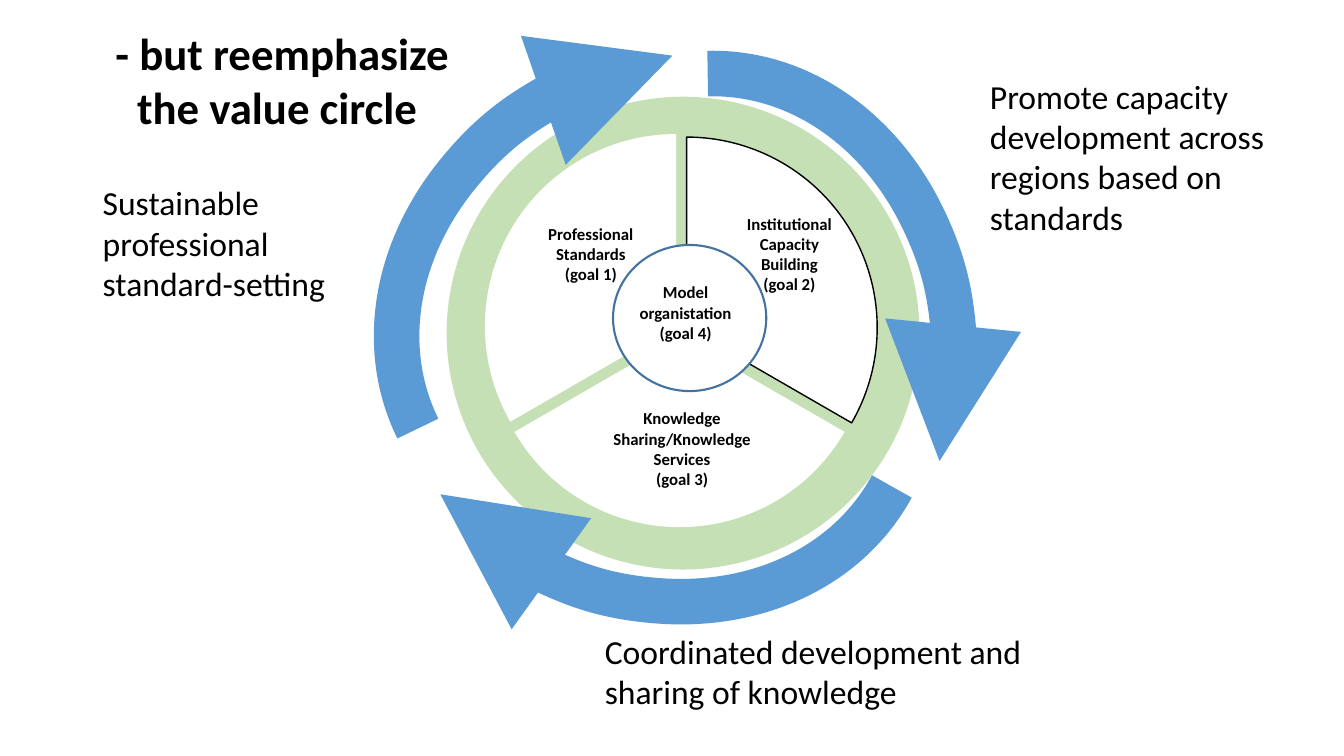
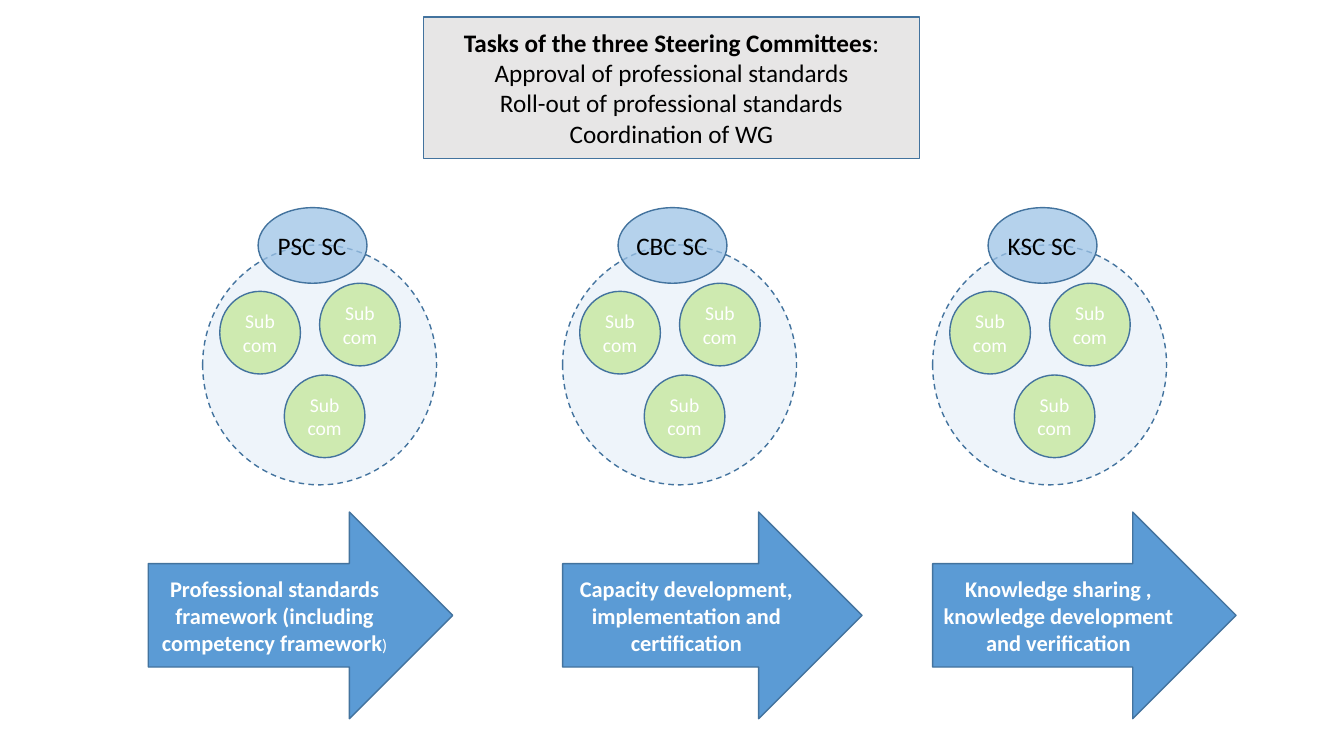
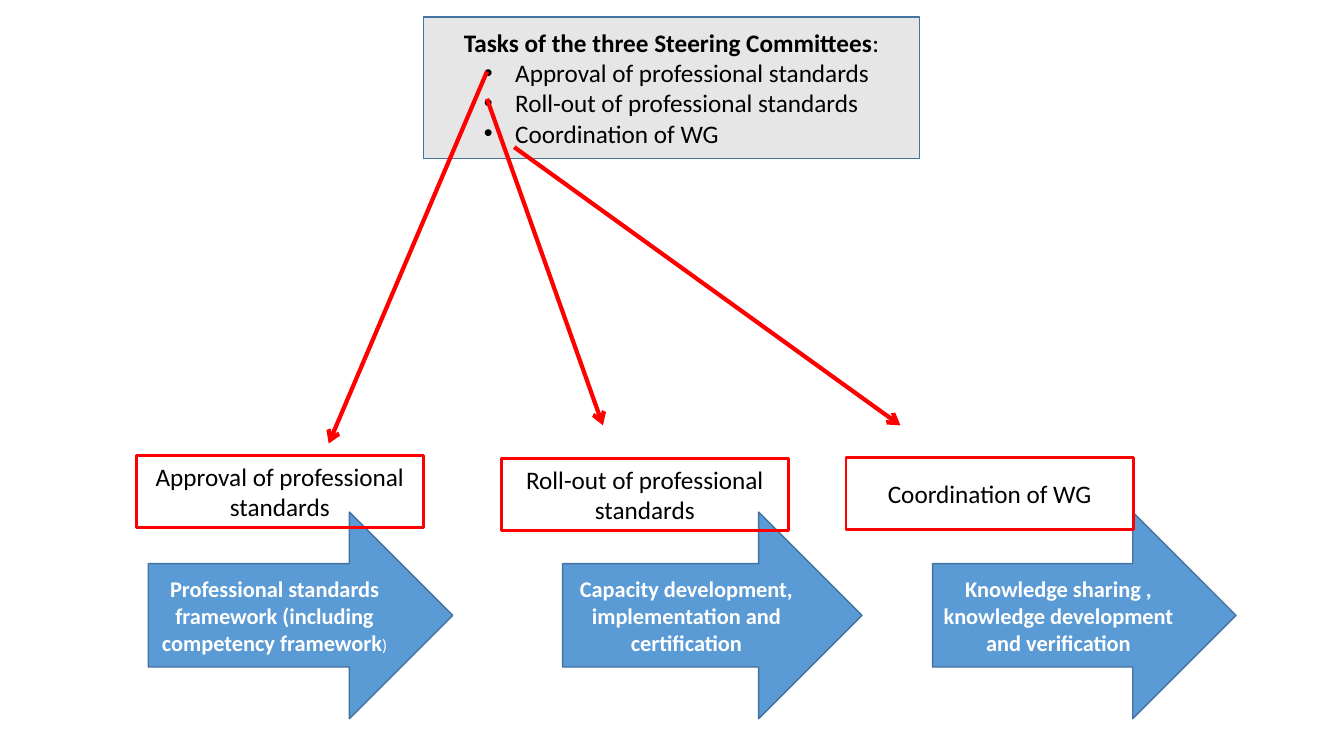
from pptx import Presentation
from pptx.dml.color import RGBColor
from pptx.enum.dml import MSO_LINE
from pptx.enum.shapes import MSO_CONNECTOR, MSO_SHAPE
from pptx.enum.text import MSO_ANCHOR, MSO_AUTO_SIZE, PP_ALIGN
from pptx.oxml.ns import qn
from pptx.util import Pt
from lxml.etree import SubElement

EMU_PER_PX = 9144  # 100 px to the inch
FONT = "Calibri"
BLACK = RGBColor(0x00, 0x00, 0x00)
WHITE = RGBColor(0xFF, 0xFF, 0xFF)
BLUE = RGBColor(0x5B, 0x9B, 0xD5)
DARK_BLUE = RGBColor(0x43, 0x73, 0x9E)
PALE_BLUE = RGBColor(0xBD, 0xD7, 0xEE)
SOFT_BLUE = RGBColor(0x9D, 0xC3, 0xE6)
RING_GREEN = RGBColor(0xC5, 0xE0, 0xB4)
SUB_GREEN = RGBColor(0xCE, 0xEA, 0xB0)
GREY = RGBColor(0xE7, 0xE6, 0xE6)
RED = RGBColor(0xFF, 0x00, 0x00)

TASKS = ("Approval of professional standards",
         "Roll-out of professional standards",
         "Coordination of WG")


def px(*lengths):
    return [length * EMU_PER_PX for length in lengths]


def write(frame, text, size=18, bold=False, color=BLACK, align=PP_ALIGN.CENTER,
          bullet=False, same_line=False):
    """Add text: \\n starts a paragraph, \\v a line; same_line extends the last paragraph."""
    frame.word_wrap = True
    for index, line in enumerate(text.split("\n")):
        para = frame.paragraphs[-1]
        if para.runs and (index or not same_line):
            para = frame.add_paragraph()
        para.alignment = align
        if bullet:
            add_bullet(para)
        for piece_index, piece in enumerate(line.split("\v")):
            if piece_index:
                para.add_line_break()
            span = para.add_run()
            span.text = piece
            span.font.name = FONT
            span.font.size = Pt(size)
            span.font.bold = bold
            span.font.color.rgb = color


def add_bullet(para):
    properties = para._p.get_or_add_pPr()
    indent, = px(31)
    properties.set("marL", str(px(81)[0]))
    properties.set("indent", str(-indent))
    SubElement(properties, qn("a:buFont"), typeface="Arial")
    SubElement(properties, qn("a:buChar"), char="•")


def paint(shape, fill=None, line=None, width=1, opacity=100):
    if fill is None:
        shape.fill.background()
    else:
        shape.fill.solid()
        shape.fill.fore_color.rgb = fill
        if opacity < 100:
            color = shape.element.spPr.find(qn("a:solidFill"))[0]
            SubElement(color, qn("a:alpha"), val=str(opacity * 1000))
    if line is None:
        shape.line.fill.background()
    else:
        shape.line.color.rgb = line
        shape.line.width = Pt(width)


def add_figure(page, kind, box, adjust=(), **style):
    shape = page.shapes.add_shape(kind, *px(*box))
    shape.shadow.inherit = False
    for index, value in enumerate(adjust):
        shape.adjustments[index] = value
    paint(shape, **style)
    return shape


def add_label(page, box, text, **style):
    write(page.shapes.add_textbox(*px(*box)).text_frame, text, **style)


def add_arrowhead(shape, kind):
    SubElement(shape.element.spPr.find(qn("a:ln")), qn("a:tailEnd"), type=kind)


def add_red_arrow(page, start, end):
    arrow = page.shapes.add_connector(MSO_CONNECTOR.STRAIGHT, *px(*start, *end))
    arrow.line.color.rgb = RED
    arrow.line.width = Pt(3)
    add_arrowhead(arrow, "arrow")
    SubElement(arrow.element.spPr, qn("a:effectLst"))


def add_page(deck, title_box, anchor):
    """Add a slide and return it with its moved, still empty title."""
    page = deck.slides.add_slide(deck.slide_layouts[5])
    title = page.shapes.title
    title.left, title.top, title.width, title.height = px(*title_box)
    title.text_frame.auto_size = MSO_AUTO_SIZE.NONE
    title.text_frame.vertical_anchor = anchor
    return page, title


def add_committee_page(deck, bullets):
    """Add a slide with the task box and the row of three block arrows."""
    page, title = add_page(deck, (420, 17, 492, 140), MSO_ANCHOR.MIDDLE)
    paint(title, GREY, DARK_BLUE)
    frame = title.text_frame
    write(frame, "Tasks of the three Steering Committees", bold=True)
    write(frame, ":", same_line=True)
    write(frame, "\n".join(TASKS), bullet=bullets,
          align=PP_ALIGN.LEFT if bullets else PP_ALIGN.CENTER)
    for left, width, text, ending in (
            (147, 302, "Professional standards framework (including competency framework", ")"),
            (558, 297, "Capacity development, implementation and certification", ""),
            (925, 301, "Knowledge sharing , knowledge development and verification", "")):
        arrow = add_figure(page, MSO_SHAPE.RIGHT_ARROW, (left, 508, width, 205),
                           fill=BLUE, line=DARK_BLUE)
        write(arrow.text_frame, text, size=16, bold=True, color=WHITE)
        if ending:
            write(arrow.text_frame, ending, size=12, color=WHITE, same_line=True)
    return page


def add_committee(page, left, name):
    """Draw a dashed circle with its steering committee and subcommittees."""
    circle = add_figure(page, MSO_SHAPE.OVAL, (left, 243, 232, 238),
                        fill=PALE_BLUE, line=DARK_BLUE, opacity=25)
    circle.line.dash_style = MSO_LINE.DASH
    add_figure(page, MSO_SHAPE.OVAL, (left + 55, 206, 108, 75),
               fill=SOFT_BLUE, line=DARK_BLUE, opacity=75)
    add_label(page, (left + 57, 224, 103, 40), name)
    for offset, top in ((81, 372), (116, 281), (17, 289)):
        sub = add_figure(page, MSO_SHAPE.OVAL, (left + offset, top, 80, 82),
                         fill=SUB_GREEN, line=DARK_BLUE)
        write(sub.text_frame, "Sub com", size=14, color=WHITE)


def build_value_circle(deck):
    page, title = add_page(deck, (72, 21, 416, 118), MSO_ANCHOR.TOP)
    write(title.text_frame, "- but reemphasize the value circle ", size=32, bold=True)

    add_figure(page, MSO_SHAPE.OVAL, (443, 96, 469, 469), fill=RING_GREEN)
    for box, text in (
            ((92, 176, 258, 131), "Sustainable\nprofessional standard-setting"),
            ((972, 70, 349, 172),
             "Promote capacity development across regions based on standards"),
            ((590, 621, 455, 91), "Coordinated development and sharing of knowledge")):
        add_label(page, box, text, size=24, align=PP_ALIGN.LEFT)

    # Angles count 1.67 degrees to the unit, so 162, 18 and 90 split the circle in thirds.
    for box, angles, line in (((492, 136, 378, 378), (162, 18), BLACK),
                              ((485, 145, 378, 378), (18, 90), None),
                              ((481, 133, 379, 381), (90, 162), None)):
        add_figure(page, MSO_SHAPE.PIE, box, angles, fill=WHITE, line=line)
    add_figure(page, MSO_SHAPE.OVAL, (608, 243, 152, 145),
               fill=WHITE, line=DARK_BLUE, width=1.5)

    for box, text in (
            ((616, 275, 128, 71), "Model organistation\n(goal 4)"),
            ((522, 217, 128, 71), "Professional\vStandards\n(goal 1)"),
            ((719, 207, 128, 91), "Institutional\nCapacity Building\n(goal 2)"),
            ((590, 400, 173, 91), "Knowledge Sharing/Knowledge Services\n(goal 3)")):
        add_label(page, box, text, size=12, bold=True)

    for left, top, rotation in ((395, 60, 119.9), (431, 16, 245.2), (467, 73, 0)):
        arc = add_figure(page, MSO_SHAPE.ARC, (left, top, 480, 570),
                         (161.39, 14.31), line=BLUE, width=32.5)
        arc.rotation = rotation
        add_arrowhead(arc, "triangle")


def build_committees(deck):
    page = add_committee_page(deck, bullets=False)
    for left, name in ((201, "PSC SC"), (558, "CBC SC"), (925, "KSC SC")):
        add_committee(page, left, name)


def build_task_links(deck):
    page = add_committee_page(deck, bullets=True)
    for task, corner, start, end in zip(
            TASKS,
            ((135, 452), (497, 455), (839, 454)),
            ((483, 71), (483, 98), (510, 146)),
            ((326, 440), (598, 422), (893, 422))):
        add_red_arrow(page, start, end)
        box = add_figure(page, MSO_SHAPE.RECTANGLE, (*corner, 285, 71), line=RED, width=2)
        write(box.text_frame, task)


def main():
    deck = Presentation()
    deck.slide_width, deck.slide_height = px(1333, 750)
    build_value_circle(deck)
    build_committees(deck)
    build_task_links(deck)
    deck.save("out.pptx")


if __name__ == "__main__":
    main()
